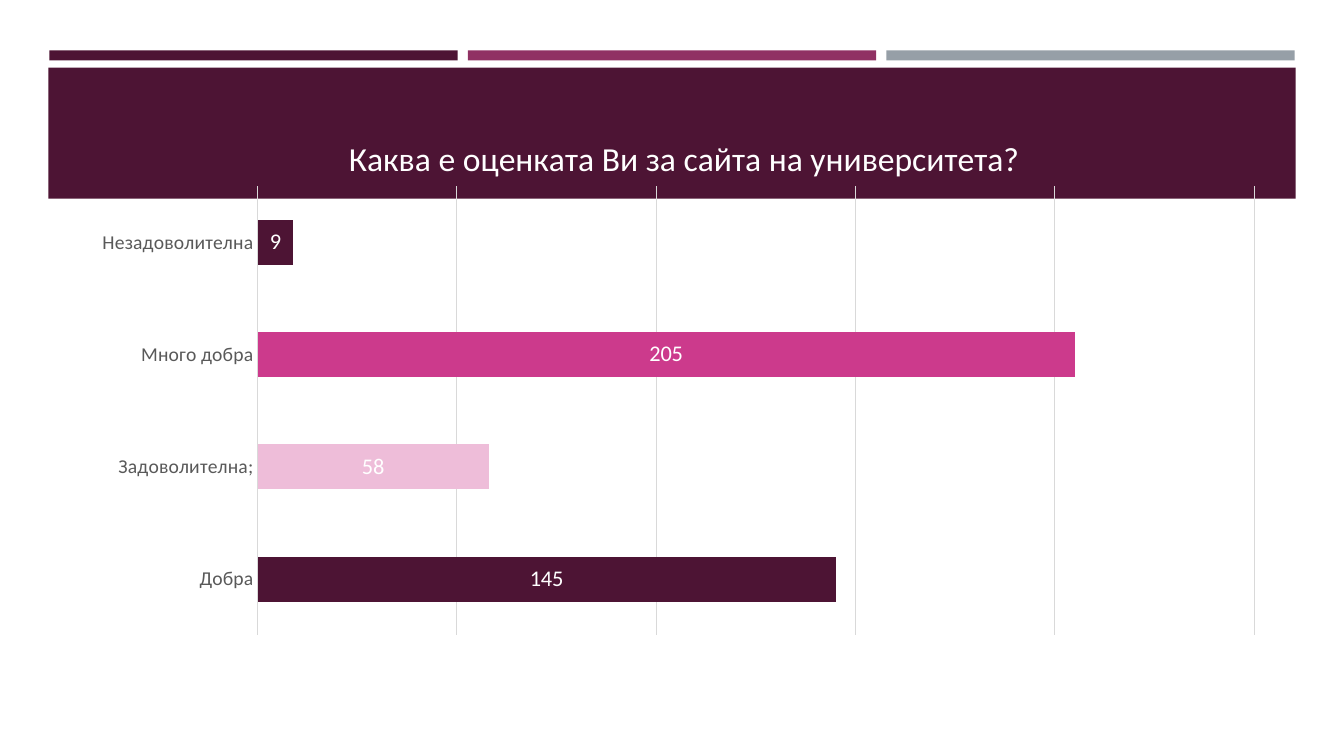
from dataclasses import dataclass

from lxml import etree
from pptx import Presentation
from pptx import util as u
from pptx.chart.data import CategoryChartData
from pptx.dml.color import RGBColor
from pptx.enum import chart as ch
from pptx.enum import shapes
from pptx.oxml import ns


@dataclass(frozen=True)
class Theme:
    plum: str = "4D1434"
    berry: str = "903163"
    grey: str = "969FA7"
    pink: str = "CC3A8C"
    pale_pink: str = "EEBDD9"
    white: str = "FFFFFF"
    black: str = "000000"
    label_grey: str = "595959"
    grid: str = "D9D9D9"
    chart_font: str = "Cabin"
    text_font: str = "Calibri"
    title_size: int = 24
    value_size: int = 16
    category_size: int = 14
    chart_size: int = 10


THEME = Theme()
QUESTION = "Каква е оценката Ви за сайта на университета?"
# Answer, number of votes, bar colour (bottom to top)
ANSWERS = [
    ("Добра", 145, THEME.plum),
    ("Задоволителна;", 58, THEME.pale_pink),
    ("Много добра", 205, THEME.pink),
    ("Незадоволителна", 9, THEME.plum),
]


def paint(fill, color):
    fill.solid()
    fill.fore_color.rgb = RGBColor.from_string(color)


def format_font(font, size, color, name=THEME.text_font):
    font.size = u.Pt(size)
    font.name = name
    font.bold = False
    font.color.rgb = RGBColor.from_string(color)


def write_text(frame, content, **style):
    line = frame.paragraphs[0].add_run()
    line.text = content
    format_font(line.font, **style)


def add_band(slide, left, top, width, height, color):
    band = slide.shapes.add_shape(
        shapes.MSO_SHAPE.RECTANGLE,
        *(u.Inches(length) for length in (left, top, width, height)))
    band.shadow.inherit = False
    paint(band.fill, color)
    band.line.fill.background()


def place(element, index, **fractions):
    """Set a manual layout, in fractions of the chart's size."""
    for old in element.findall(ns.qn("c:layout")):
        element.remove(old)
    layout = etree.Element(ns.qn("c:layout"))
    manual = etree.SubElement(layout, ns.qn("c:manualLayout"))
    if "w" in fractions:
        etree.SubElement(manual, ns.qn("c:layoutTarget"), val="inner")
    for side in ("x", "y"):
        etree.SubElement(manual, ns.qn(f"c:{side}Mode"), val="edge")
    for side, fraction in fractions.items():
        etree.SubElement(manual, ns.qn(f"c:{side}"), val=str(fraction))
    element.insert(index, layout)


def style_axes(chart):
    answers = chart.category_axis
    answers.major_tick_mark = ch.XL_TICK_MARK.NONE
    answers.format.line.fill.background()
    format_font(answers.tick_labels.font, THEME.category_size, THEME.label_grey)

    votes = chart.value_axis
    votes.minimum_scale, votes.maximum_scale, votes.major_unit = 0, 250, 50
    votes.visible = False
    gridline = votes.major_gridlines.format.line
    gridline.width = u.Pt(0.75)
    paint(gridline.fill, THEME.grid)


def style_bars(chart):
    bars = chart.plots[0]
    bars.gap_width, bars.overlap = 150, 100
    bars.vary_by_categories = False
    series = bars.series[0]
    paint(series.format.fill, THEME.plum)
    for index, (_, _, color) in enumerate(ANSWERS):
        if color != THEME.plum:
            paint(series.points[index].format.fill, color)
    labels = series.data_labels
    labels.show_value = True
    labels.position = ch.XL_LABEL_POSITION.CENTER
    format_font(labels.font, THEME.value_size, THEME.white)


def add_survey_chart(slide):
    data = CategoryChartData()
    data.categories = [answer for answer, _, _ in ANSWERS]
    data.add_series("Series 1", [votes for _, votes, _ in ANSWERS])
    chart = slide.shapes.add_chart(
        ch.XL_CHART_TYPE.BAR_STACKED, u.Inches(0.78), u.Inches(1.08),
        u.Inches(11.91), u.Inches(5.33), data).chart
    chart.has_legend = False
    format_font(chart.font, THEME.chart_size, THEME.black, THEME.chart_font)

    chart.has_title = True
    title = chart.chart_title
    write_text(title.text_frame, QUESTION, size=THEME.title_size, color=THEME.white)
    title.include_in_layout = False
    place(title._element, 1, x=0.22, y=0.04)

    style_axes(chart)
    style_bars(chart)
    plot_area = chart._chartSpace.find(".//" + ns.qn("c:plotArea"))
    place(plot_area, 0, x=0.149, y=0.144, w=0.83, h=0.836)


def main():
    deck = Presentation()
    deck.slide_width, deck.slide_height = u.Inches(13.33), u.Inches(7.5)
    slide = deck.slides.add_slide(deck.slide_layouts[6])

    # Three accent strips above the title band
    for column, color in enumerate((THEME.plum, THEME.berry, THEME.grey)):
        add_band(slide, 0.49 + column * 4.15, 0.5, 4.05, 0.1, color)
    add_band(slide, 0.48, 0.67, 12.37, 1.3, THEME.plum)

    # Survey results with the question as title
    add_survey_chart(slide)
    deck.save("out.pptx")


if __name__ == "__main__":
    main()
